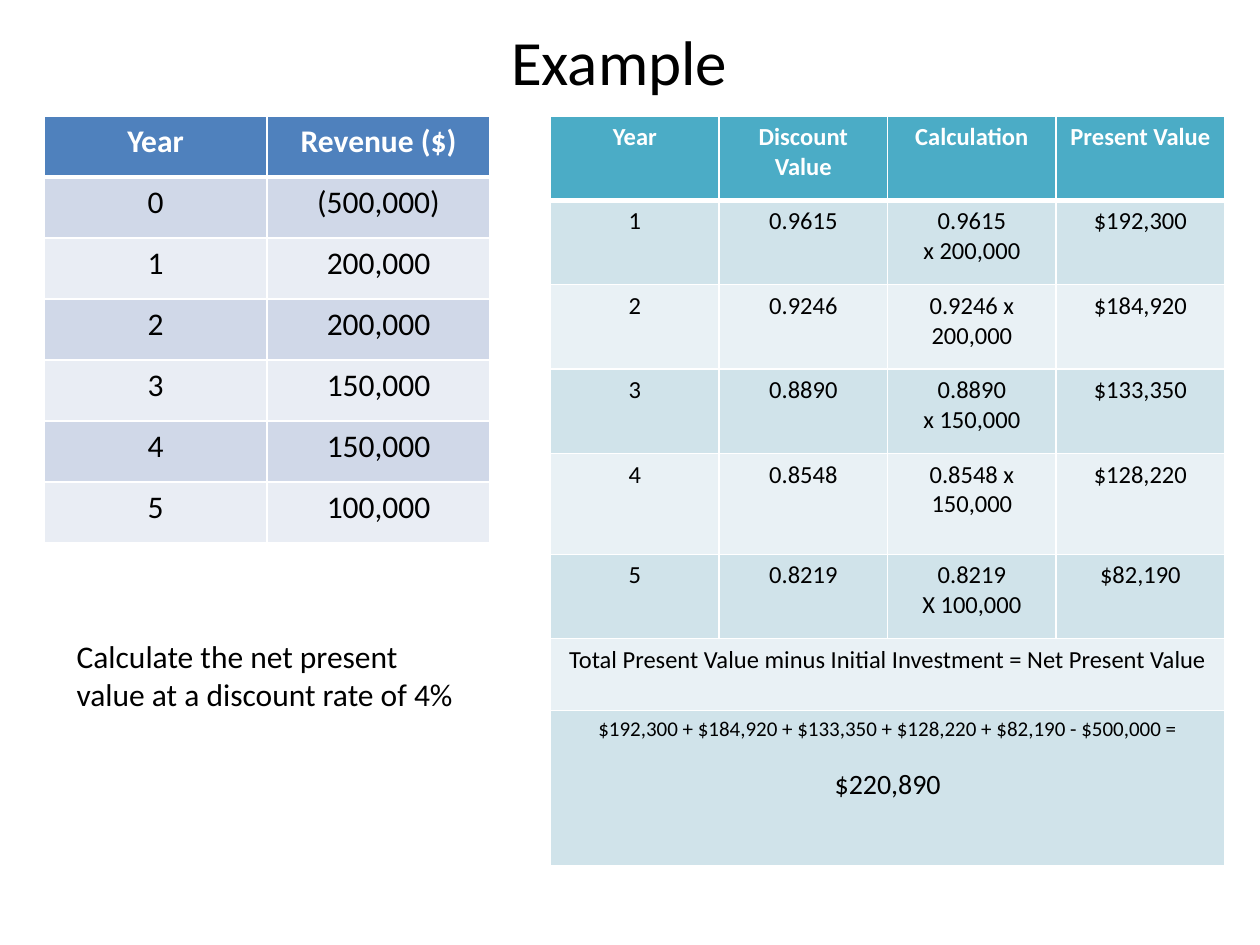
import pptx
import pptx.util
import pptx.dml.color
import pptx.enum.text
import pptx.oxml
import pptx.oxml.ns

RGBColor = pptx.dml.color.RGBColor
BLACK = RGBColor(0x00, 0x00, 0x00)
WHITE = RGBColor(0xFF, 0xFF, 0xFF)
BLUE_SHADES = (RGBColor(0x4F, 0x81, 0xBD), RGBColor(0xD0, 0xD8, 0xE8), RGBColor(0xE9, 0xED, 0xF4))
TEAL_SHADES = (RGBColor(0x4B, 0xAC, 0xC6), RGBColor(0xD0, 0xE3, 0xEA), RGBColor(0xE9, 0xF1, 0xF5))
CENTER = pptx.enum.text.PP_ALIGN.CENTER
LEFT = pptx.enum.text.PP_ALIGN.LEFT

REVENUES = [
    ("Year", "Revenue ($)"),
    ("0", "(500,000)"),
    ("1", "200,000"),
    ("2", "200,000"),
    ("3", "150,000"),
    ("4", "150,000"),
    ("5", "100,000"),
]
PRESENT_VALUES = [
    ("Year", "Discount Value", "Calculation", "Present Value"),
    ("1", "0.9615", "0.9615\nx 200,000", "$192,300"),
    ("2", "0.9246", "0.9246 x 200,000", "$184,920"),
    ("3", "0.8890", "0.8890\nx 150,000", "$133,350"),
    ("4", "0.8548", "0.8548 x 150,000", "$128,220"),
    ("5", "0.8219", "0.8219\nX 100,000", "$82,190"),
    ("Total Present Value minus Initial Investment = Net Present Value",),
    ("$192,300 + $184,920 + $133,350 + $128,220 + $82,190 - $500,000 =\n$220,890",),
]


class SlideBuilder:
    font_name = "Calibri"
    columns, rows = 100, 75

    def __init__(self, deck):
        self.column = deck.slide_width / self.columns
        self.row = deck.slide_height / self.rows
        self.slide = deck.slides.add_slide(deck.slide_layouts[5])

    def place(self, left, top, width, height):
        return (round(left * self.column), round(top * self.row),
                round(width * self.column), round(height * self.row))

    def style(self, frame, size, color=BLACK, bold=False, align=CENTER):
        for para in frame.paragraphs:
            para.alignment = align
            para.font.name = self.font_name
            para.font.size = pptx.util.Pt(size)
            para.font.color.rgb = color
            para.font.bold = bold

    def title(self, text, area, size):
        box = self.slide.shapes.title
        box.left, box.top, box.width, box.height = self.place(*area)
        frame = box.text_frame
        frame.text = text
        frame.auto_size = pptx.enum.text.MSO_AUTO_SIZE.NONE
        frame.vertical_anchor = pptx.enum.text.MSO_ANCHOR.TOP
        self.style(frame, size)

    def text(self, text, area, size):
        frame = self.slide.shapes.add_textbox(*self.place(*area)).text_frame
        frame.word_wrap = True
        frame.text = text
        self.style(frame, size, align=LEFT)

    def borders(self, cell, top, bottom):
        properties = cell._tc.get_or_add_tcPr()
        sides = (("lnL", 1), ("lnR", 1), ("lnT", top), ("lnB", bottom))
        for index, (side, points) in enumerate(sides):
            properties.insert(index, pptx.oxml.parse_xml(
                f'<a:{side} {pptx.oxml.ns.nsdecls("a")} w="{pptx.util.Pt(points)}">'
                f'<a:solidFill><a:srgbClr val="{WHITE}"/></a:solidFill></a:{side}>'))

    def table(self, records, area, heights, shades, size):
        count = len(records[0])
        table = self.slide.shapes.add_table(len(records), count, *self.place(*area)).table
        table.first_row = table.horz_banding = False
        for column in table.columns:
            column.width = round(area[2] * self.column / count)
        header, odd, even = shades
        for number, (record, height) in enumerate(zip(records, heights)):
            table.rows[number].height = round(height * self.row)
            is_header = number == 0
            if len(record) < count:
                table.cell(number, 0).merge(table.cell(number, count - 1))
            for position in range(count):
                cell = table.cell(number, position)
                cell.fill.solid()
                cell.fill.fore_color.rgb = header if is_header else odd if number % 2 else even
                self.borders(cell, 3 if number == 1 else 1, 3 if is_header else 1)
                if position < len(record):
                    cell.text = record[position]
                    self.style(cell.text_frame, size, WHITE if is_header else BLACK, is_header)
        return table


def main():
    deck = pptx.Presentation()
    deck.slide_width = pptx.util.Inches(10)
    deck.slide_height = pptx.util.Inches(7.5)
    page = SlideBuilder(deck)
    page.title("Example", (3.5, 1.3, 91.3, 7.1), 36)
    page.table(REVENUES, (3.5, 9.2, 35.4, 33.9), [33.9 / 7] * 7, BLUE_SHADES, 18)
    page.text("Calculate the net present value at a discount rate of 4%",
              (5.1, 50.1, 33.1, 7.1), 18)
    heights = [6.7, 6.7, 6.7, 6.7, 8, 6.7, 5.7, 12.3]
    values = page.table(PRESENT_VALUES, (43.7, 9.2, 53.5, sum(heights)), heights, TEAL_SHADES, 14)
    formula, result = values.cell(len(heights) - 1, 0).text_frame.paragraphs
    formula.font.size = pptx.util.Pt(12)
    result.font.size = pptx.util.Pt(16)
    result.space_before = pptx.util.Pt(14.6)
    deck.save("out.pptx")


if __name__ == "__main__":
    main()
